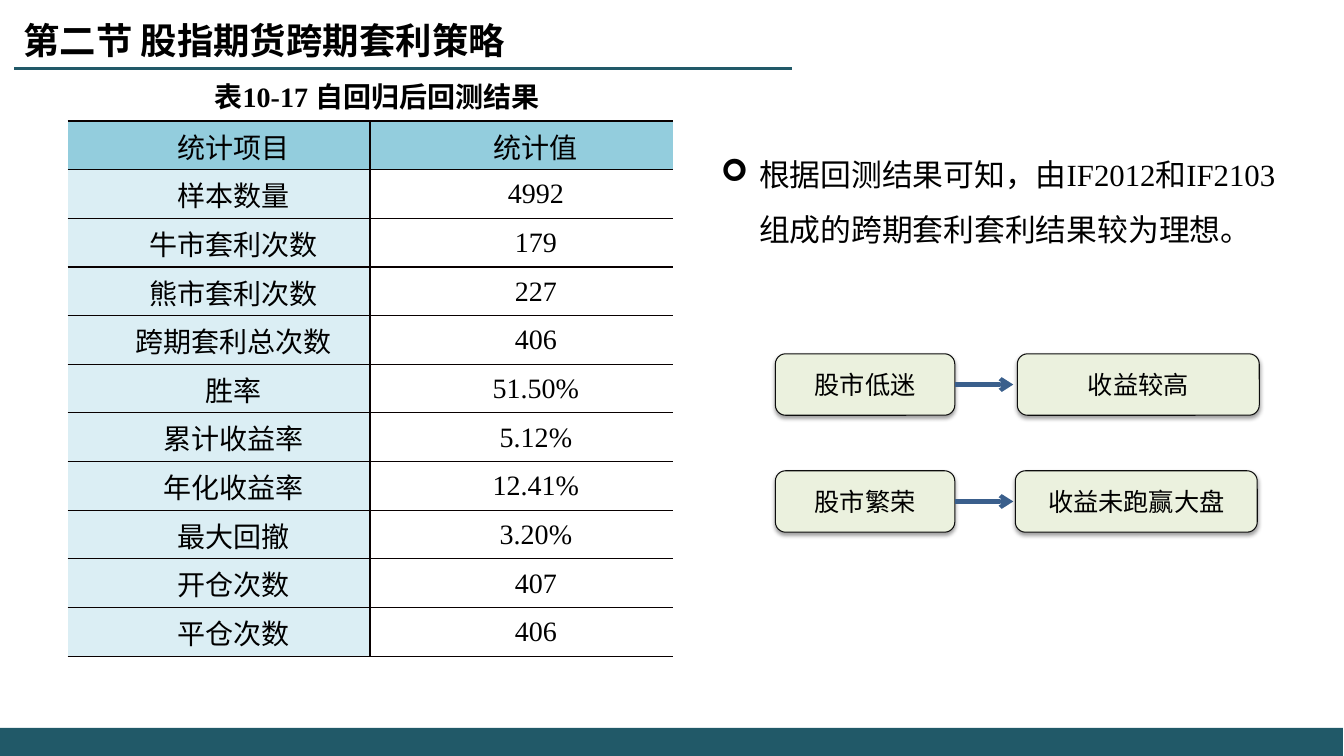
import pptx
import pptx.dml.color
import pptx.enum.shapes
import pptx.enum.text
import pptx.oxml.ns
import pptx.util
from lxml import etree

Inches = pptx.util.Inches
Pt = pptx.util.Pt
qn = pptx.oxml.ns.qn
Shape = pptx.enum.shapes.MSO_SHAPE
Align = pptx.enum.text.PP_ALIGN
Anchor = pptx.enum.text.MSO_ANCHOR

TEAL = "215968"
BLUE = "3A5F8C"
BLACK = "000000"
BORDER = "080000"
HEADER_FILL = "93CDDD"
LABEL_FILL = "DBEEF4"
BOX_FILL = "EBF1DE"
BOX_LINE = "0D0D0D"

RESULTS = [
    ("统计项目", "统计值"),
    ("样本数量", "4992"),
    ("牛市套利次数", "179"),
    ("熊市套利次数", "227"),
    ("跨期套利总次数", "406"),
    ("胜率", "51.50%"),
    ("累计收益率", "5.12%"),
    ("年化收益率", "12.41%"),
    ("最大回撤", "3.20%"),
    ("开仓次数", "407"),
    ("平仓次数", "406"),
]
# Market state, outcome, top of the row, left of the outcome box
FLOWS = [
    ("股市低迷", "收益较高", 3.51, 10.09),
    ("股市繁荣", "收益未跑赢大盘", 4.67, 10.07),
]


def color(value):
    return pptx.dml.color.RGBColor.from_string(value)


def add_xml(parent, tag, **attributes):
    return etree.SubElement(parent, qn(tag), attributes)


class SlideBuilder:
    def __init__(self, page):
        self.page = page
        self.latin_font = "Times New Roman"
        self.asian_font = "Noto Sans CJK SC"

    def set_text(self, frame, text, size, bold=False, align=Align.LEFT, font=None,
                 anchor=Anchor.TOP, indent=None):
        frame.word_wrap = True
        frame.vertical_anchor = anchor
        frame.text = text
        para = frame.paragraphs[0]
        para.alignment = align
        para.space_before = Pt(0)
        if indent:
            margin, first = indent
            properties = para._p.get_or_add_pPr()
            properties.set("marL", str(Inches(margin)))
            properties.set("indent", str(Inches(first)))
        for span in para.runs:
            span.font.size = Pt(size)
            span.font.bold = bold
            span.font.color.rgb = color(BLACK)
            span.font.name = font or self.latin_font
            add_xml(span._r.get_or_add_rPr(), "a:ea", typeface=self.asian_font)
        return para

    def place(self, shape, left, top, width, height):
        shape.left, shape.top = Inches(left), Inches(top)
        shape.width, shape.height = Inches(width), Inches(height)
        shape.text_frame.auto_size = pptx.enum.text.MSO_AUTO_SIZE.NONE

    def title(self, text, *area):
        self.place(self.page.shapes.title, *area)
        self.set_text(self.page.shapes.title.text_frame, text, 26, bold=True,
                      font=self.asian_font)

    def bullet(self, text, *area):
        body = self.page.placeholders[1]
        self.place(body, *area)
        para = self.set_text(body.text_frame, text, 22, indent=(0.38, -0.38))
        para.line_spacing = 1.5
        properties = para._p.get_or_add_pPr()
        add_xml(properties, "a:buFont", typeface="Wingdings")
        add_xml(properties, "a:buChar", char="➢")

    def caption(self, text, *area):
        box = self.page.shapes.add_textbox(*map(Inches, area))
        self.set_text(box.text_frame, text, 20, bold=True, align=Align.CENTER,
                      indent=(0, 0.29))

    def bar(self, *area):
        bar = self.page.shapes.add_shape(Shape.RECTANGLE, *map(Inches, area))
        bar.shadow.inherit = False
        bar.fill.solid()
        bar.fill.fore_color.rgb = color(TEAL)
        bar.line.fill.background()

    def line(self, start, end, line_color, width, arrow=False):
        line = self.page.shapes.add_connector(
            pptx.enum.shapes.MSO_CONNECTOR.STRAIGHT, *map(Inches, start + end))
        line.line.color.rgb = color(line_color)
        line.line.width = Pt(width)
        properties = line._element.spPr
        if arrow:
            add_xml(properties.find(qn("a:ln")), "a:tailEnd", type="arrow")
        add_xml(properties, "a:effectLst")

    def flow_box(self, text, *area):
        box = self.page.shapes.add_shape(Shape.ROUNDED_RECTANGLE, *map(Inches, area))
        box.shadow.inherit = False
        box.fill.solid()
        box.fill.fore_color.rgb = color(BOX_FILL)
        box.line.color.rgb = color(BOX_LINE)
        box.line.width = Pt(0.75)
        effects = box._element.spPr.find(qn("a:effectLst"))
        shadow = add_xml(effects, "a:outerShdw", blurRad=str(Pt(3.1)),
                         dist=str(Pt(1.6)), dir="5400000", rotWithShape="0")
        tint = add_xml(shadow, "a:srgbClr", val=BLACK)
        add_xml(tint, "a:alpha", val="38000")
        self.set_text(box.text_frame, text, 18, align=Align.CENTER,
                      anchor=Anchor.MIDDLE)

    def cell_borders(self, cell, open_side):
        properties = cell._tc.get_or_add_tcPr()
        for side in ("a:lnL", "a:lnR", "a:lnT", "a:lnB"):
            border = add_xml(properties, side, w=str(Pt(1)))
            if side == open_side:
                add_xml(border, "a:noFill")
            else:
                add_xml(add_xml(border, "a:solidFill"), "a:srgbClr", val=BORDER)

    def table(self, rows, *area):
        table = self.page.shapes.add_table(
            len(rows), len(rows[0]), *map(Inches, area)).table
        table.horz_banding = False
        for row, values in enumerate(rows):
            for column, value in enumerate(values):
                cell = table.cell(row, column)
                cell.margin_left = cell.margin_right = cell.margin_top = Inches(0.01)
                cell.margin_bottom = 0
                self.set_text(cell.text_frame, value, 20, align=Align.CENTER,
                              indent=(0, 0.29))
                cell.vertical_anchor = Anchor.MIDDLE
                self.cell_borders(cell, "a:lnR" if column else "a:lnL")
                if row and column:
                    cell.fill.background()
                else:
                    cell.fill.solid()
                    cell.fill.fore_color.rgb = color(LABEL_FILL if row else HEADER_FILL)


def main():
    deck = pptx.Presentation()
    deck.slide_width, deck.slide_height = Inches(13.33), Inches(7.5)
    builder = SlideBuilder(deck.slides.add_slide(deck.slide_layouts[1]))

    # Frame and heading
    builder.bar(0, 7.22, 13.32, 0.28)
    builder.line((0.14, 0.68), (7.86, 0.68), TEAL, 1.5)
    builder.title("第二节 股指期货跨期套利策略", 0.13, 0.13, 6.11, 0.54)

    # Backtest results
    builder.caption("表10-17 自回归后回测结果", 0.92, 0.74, 5.35, 0.44)
    builder.table(RESULTS, 0.67, 1.2, 6, 5.31)

    # Conclusion
    builder.bullet("根据回测结果可知，由IF2012和IF2103组成的跨期套利套利结果较为理想。",
                   7.05, 1.31, 6, 1.14)

    # Market state to outcome
    height = 0.61
    for state, outcome, top, outcome_left in FLOWS:
        middle = top + height / 2
        builder.flow_box(state, 7.69, top, 1.78, height)
        builder.line((9.47, middle), (10.05, middle), BLUE, 3, arrow=True)
        builder.flow_box(outcome, outcome_left, top, 2.4, height)

    deck.save("out.pptx")


if __name__ == "__main__":
    main()
